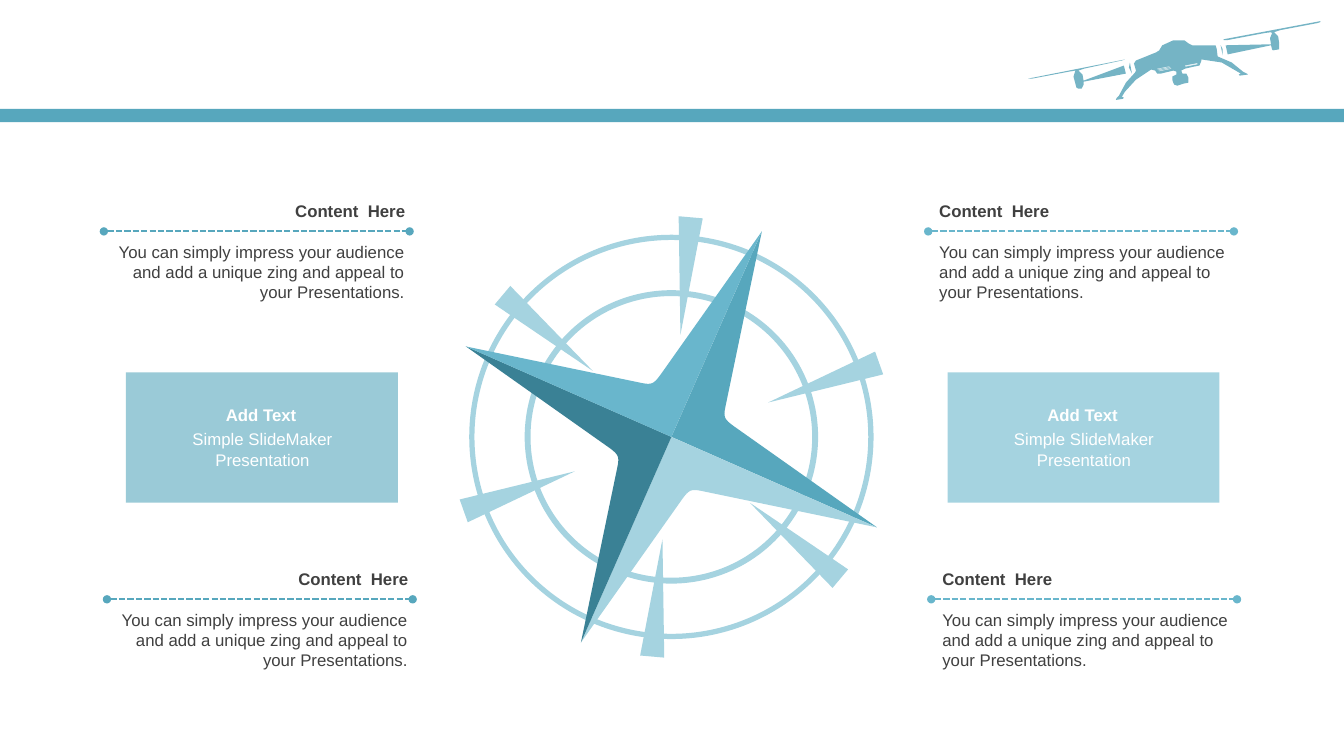
from dataclasses import dataclass
from math import cos, radians, sin

from pptx import Presentation
from pptx.dml.color import RGBColor
from pptx.enum.dml import MSO_LINE
from pptx.enum.shapes import MSO_CONNECTOR, MSO_SHAPE
from pptx.enum.text import MSO_ANCHOR, MSO_AUTO_SIZE, PP_ALIGN
from pptx.oxml.ns import qn
from pptx.oxml.xmlchemy import OxmlElement
from pptx.util import Pt


@dataclass(frozen=True)
class Theme:
    font: str = "Arial"
    text_size: float = 12
    rule_width: float = 1.5
    vent_width: float = 0.25
    ink: str = "404040"
    white: str = "FFFFFF"
    teal: str = "57A7BD"
    sky: str = "69B6CC"
    pale: str = "A5D3E0"
    muted: str = "9ACAD7"
    deep: str = "3A8195"
    drone: str = "75B4C5"


HEADING = "Content  Here"
BODY = ("You can simply impress your audience and add a unique zing "
        "and appeal to your Presentations.")
CAPTION = "Simple SlideMaker Presentation"
CENTER_X, CENTER_Y = 479.6, 312.1
DRONE_UNIT = 0.72
DRONE_PARTS = {
    "right rotor": [
        (1214, 39), (1310, 21), (1310, 22), (1307, 23), (1270, 30), (1264, 32),
        (1268, 36), (1269, 42), (1269, 49), (1263, 50), (1262, 49), (1261, 45),
        (1218, 54), (1216, 45), (1261, 44), (1260, 38), (1262, 33), (1261, 32),
        (1254, 33), (1217, 40), (1214, 40)],
    "left rotor": [
        (1115, 65), (1117, 73), (1075, 81), (1075, 84), (1073, 88), (1070, 88),
        (1068, 87), (1065, 76), (1067, 70), (1061, 71), (1024, 78), (1020, 78),
        (1116, 59), (1113, 60), (1076, 68), (1070, 70), (1074, 74), (1075, 80)],
    "left joint": [(1121, 62), (1123, 73), (1120, 67)],
    "right joint": [(1211, 45), (1213, 49), (1213, 55)],
    "body": [
        (1235, 72), (1233, 71), (1222, 62), (1208, 56), (1207, 48), (1206, 45),
        (1203, 45), (1183, 45), (1179, 43), (1175, 40), (1164, 40), (1153, 45),
        (1150, 50), (1147, 52), (1127, 60), (1125, 63), (1127, 70), (1126, 72),
        (1117, 82), (1110, 95), (1108, 97), (1107, 99), (1108, 99), (1114, 98),
        (1115, 97), (1113, 96), (1116, 91), (1127, 79), (1142, 69), (1146, 70),
        (1148, 73), (1152, 73), (1164, 70), (1167, 71), (1167, 74), (1163, 76),
        (1163, 79), (1164, 82), (1165, 84), (1168, 85), (1174, 83), (1179, 82),
        (1179, 77), (1177, 73), (1173, 73), (1172, 70), (1176, 68), (1185, 66),
        (1190, 65), (1192, 60), (1192, 59), (1212, 62), (1231, 73), (1229, 74),
        (1230, 75), (1238, 74), (1237, 73)],
}


def curve(start, first, second, end, steps=8):
    """Return points along a cubic curve."""
    points = []
    for step in range(steps + 1):
        t = step / steps
        weights = ((1 - t) ** 3, 3 * t * (1 - t) ** 2, 3 * t * t * (1 - t), t ** 3)
        points.append(tuple(
            sum(weight * value for weight, value in zip(weights, axis))
            for axis in zip(start, first, second, end)))
    return points


class SlideBuilder:
    """Draws styled elements on one slide, with lengths in points."""

    def __init__(self, slide, theme):
        self.shapes = slide.shapes
        self.theme = theme

    def paint(self, shape, color):
        shape.shadow.inherit = False
        shape.fill.solid()
        shape.fill.fore_color.rgb = RGBColor.from_string(color)
        shape.line.fill.background()
        return shape

    def shape(self, kind, left, top, width, height, color):
        shape = self.shapes.add_shape(kind, Pt(left), Pt(top), Pt(width), Pt(height))
        return self.paint(shape, color)

    def outline(self, points, color, unit=1):
        corners = [(Pt(x * unit), Pt(y * unit)) for x, y in points]
        builder = self.shapes.build_freeform(*corners[0], scale=1.0)
        builder.add_line_segments(corners[1:], close=True)
        return self.paint(builder.convert_to_shape(), color)

    def line(self, start, end, color, width):
        connector = self.shapes.add_connector(
            MSO_CONNECTOR.STRAIGHT, *(Pt(value) for value in (*start, *end)))
        connector.line.color.rgb = RGBColor.from_string(color)
        connector.line.width = Pt(width)
        connector.element.spPr.append(OxmlElement("a:effectLst"))
        return connector

    def dotted_rule(self, left, y, length, color):
        rule = self.line((left, y), (left + length, y), color, self.theme.rule_width)
        rule.line.dash_style = MSO_LINE.SQUARE_DOT
        for tag in ("a:headEnd", "a:tailEnd"):
            end = OxmlElement(tag)
            end.set("type", "oval")
            rule.element.spPr.find(qn("a:ln")).append(end)

    def text(self, words, left, top, width, height, align, color,
             bold=False, anchor=MSO_ANCHOR.TOP):
        box = self.shapes.add_textbox(Pt(left), Pt(top), Pt(width), Pt(height))
        frame = box.text_frame
        frame.text = words
        frame.word_wrap = True
        frame.auto_size = MSO_AUTO_SIZE.SHAPE_TO_FIT_TEXT
        frame.vertical_anchor = anchor
        para = frame.paragraphs[0]
        para.alignment = align
        font = para.runs[0].font
        font.name = self.theme.font
        font.size = Pt(self.theme.text_size)
        font.bold = bold
        font.color.rgb = RGBColor.from_string(color)

    def content(self, left, top, align, rule_gap, rule_color):
        ink = self.theme.ink
        self.text(HEADING, left, top, 221, 21.8, align, ink, True, MSO_ANCHOR.MIDDLE)
        self.text(BODY, left, top + 29.5, 220.5, 51, align, ink)
        self.dotted_rule(left - rule_gap, top + 25.6, 218.4, rule_color)

    def panel(self, left, color):
        self.shape(MSO_SHAPE.RECTANGLE, left, 266, 194.2, 93, color)
        white = self.theme.white
        self.text("Add Text", left + 34.6, 285.8, 123.8, 21.8,
                  PP_ALIGN.CENTER, white, True)
        self.text(CAPTION, left + 35.6, 303, 123.8, 36.3, PP_ALIGN.CENTER, white)

    def compass(self):
        theme = self.theme
        for radius, thickness in ((104.8, 0.02), (144.4, 0.013)):
            ring = self.shape(MSO_SHAPE.DONUT, CENTER_X - radius, CENTER_Y - radius,
                              2 * radius, 2 * radius, theme.pale)
            ring.adjustments[0] = thickness
        width, height, distance = 17.3, 84.2, 115.4
        for angle in (5, 70.4, 130, 185, 250.4, 310):
            x = CENTER_X - distance * sin(radians(angle))
            y = CENTER_Y + distance * cos(radians(angle))
            needle = self.shape(MSO_SHAPE.ISOSCELES_TRIANGLE, x - width / 2,
                                y - height / 2, width, height, theme.pale)
            needle.rotation = angle
        nook = curve((38.5, -21.2), (37.1, -14), (37.8, -12.6), (44.6, -7.6))
        blade = [(0, 0), (64.6, -146.8), *nook, (146.8, 64.6)]
        for color in (theme.teal, theme.pale, theme.deep, theme.sky):
            self.outline([(CENTER_X + x, CENTER_Y + y) for x, y in blade], color)
            blade = [(-y, x) for x, y in blade]

    def drone(self):
        for points in DRONE_PARTS.values():
            self.outline(points, self.theme.drone, DRONE_UNIT)
        for x, y, shift in ((826.6, 49.3, 0.7), (846.9, 47.4, -0.2)):
            for row in range(3):
                left, top = x + row * shift, y + row * shift
                self.line((left, top), (left + 8.6, top - 1.7),
                          self.theme.white, self.theme.vent_width)


def main():
    deck = Presentation()
    deck.slide_width, deck.slide_height = Pt(960), Pt(540)
    theme = Theme()
    page = SlideBuilder(deck.slides.add_slide(deck.slide_layouts[6]), theme)
    page.shape(MSO_SHAPE.RECTANGLE, 0, 77.8, 960, 9.4, theme.teal)
    page.drone()
    for top, shift in ((139.7, 0), (402.5, 2.2)):
        page.content(75.6 + shift, top, PP_ALIGN.RIGHT, 1.4, theme.teal)
        page.content(663.8 + shift, top, PP_ALIGN.LEFT, 0.8, theme.sky)
    page.compass()
    page.panel(90, theme.muted)
    page.panel(676.8, theme.pale)
    deck.save("out.pptx")


if __name__ == "__main__":
    main()
